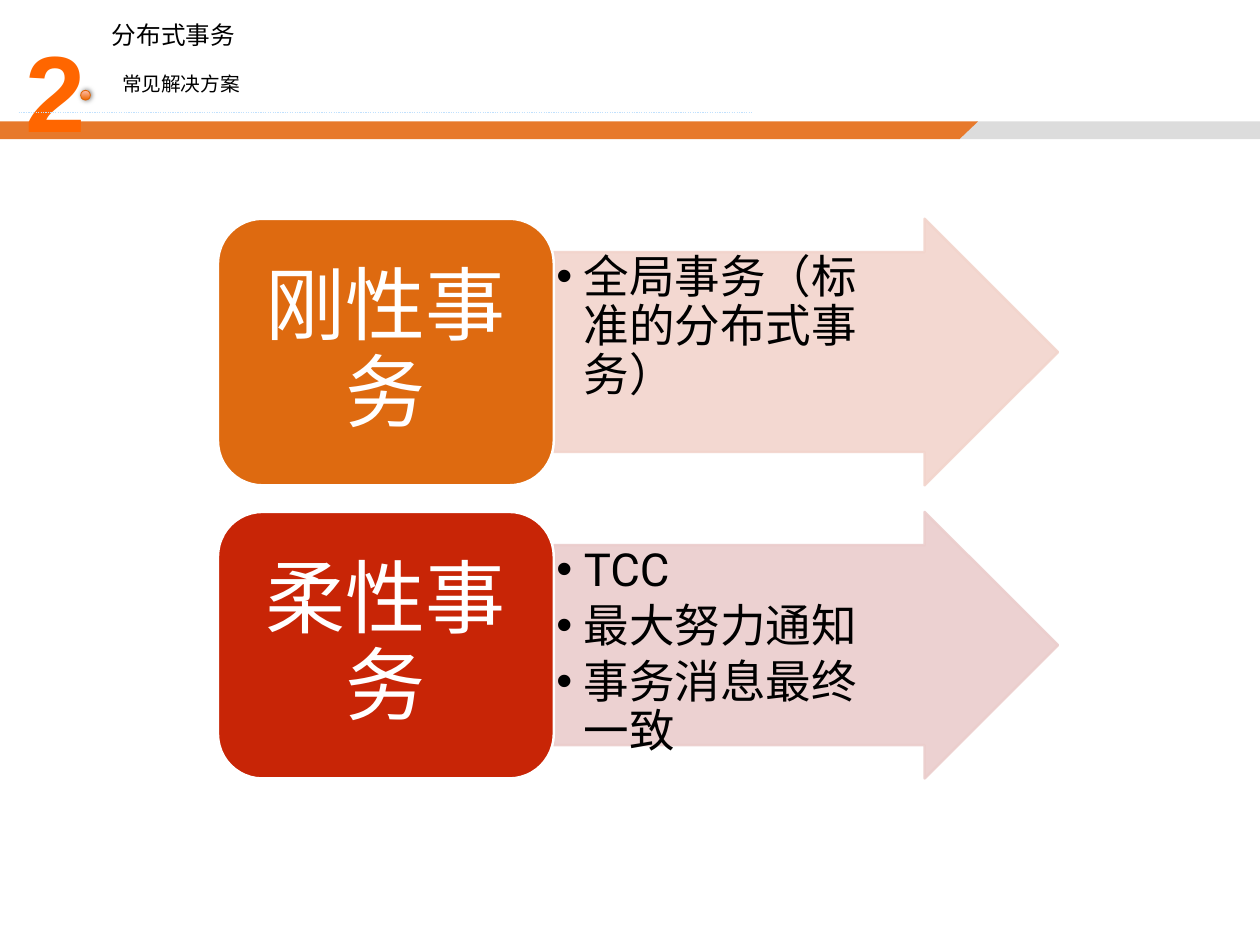
from lxml.etree import SubElement
from pptx import Presentation
from pptx.dml.color import RGBColor
from pptx.enum.dml import MSO_LINE
from pptx.enum.shapes import MSO_CONNECTOR, MSO_SHAPE
from pptx.enum.text import MSO_ANCHOR, PP_ALIGN
from pptx.oxml.ns import qn
from pptx.util import Inches, Pt

COLORS = {
    "grey": "DCDCDC", "orange": "E7792B", "number": "FF6600",
    "dot_dark": "EE6800", "dot_light": "FFBEAD", "dot_line": "DE670B",
    "rule": "C1E1FE", "black": "000000", "white": "FFFFFF",
    "rigid": "DE6A10", "rigid_arrow": "F2D4CC",
    "flexible": "C82506", "flexible_arrow": "EBCDCC",
}


def rgb(name):
    return RGBColor.from_string(COLORS[name])


def add_run(p, text, size, font, color, bold=False):
    """Add a run whose font also applies to Chinese characters."""
    r = p.add_run()
    r.text = text
    r.font.size = Pt(size)
    r.font.bold = bold
    r.font.color.rgb = rgb(color)
    r.font.name = font
    SubElement(r.font._element, qn("a:ea"), typeface=font)


prs = Presentation()
prs.slide_width, prs.slide_height = Inches(14.22), Inches(10.67)
s = prs.slides.add_slide(prs.slide_layouts[6])

# Header band
bands = [
    ("grey", [(11.02, 1.37), (14.22, 1.37), (14.22, 1.57), (10.82, 1.57)]),
    ("orange", [(0, 1.37), (11.04, 1.37), (10.83, 1.57), (0, 1.57)]),
]
for color, points in bands:
    corners = [(Inches(x), Inches(y)) for x, y in points]
    builder = s.shapes.build_freeform(*corners[0])
    builder.add_line_segments(corners[1:], close=True)
    sp = builder.convert_to_shape()
    sp.shadow.inherit = False
    sp.fill.solid()
    sp.fill.fore_color.rgb = rgb(color)
    sp.line.fill.background()

# Section number and titles
headings = [
    ("2", (0.23, -0.27, 0.8, 1.77), 88, "Arial", "number", True, PP_ALIGN.CENTER),
    ("分布式事务", (1.16, 0.18, 1.6, 0.77), 20, "Noto Sans CJK SC", "black", False, PP_ALIGN.CENTER),
    ("常见解决方案", (1.28, 0.76, 5.69, 0.37), 16, "Noto Sans CJK JP", "black", False, PP_ALIGN.LEFT),
]
for text, place, size, font, color, bold, align in headings:
    tf = s.shapes.add_textbox(*map(Inches, place)).text_frame
    tf.word_wrap = True
    p = tf.paragraphs[0]
    p.alignment = align
    if bold:
        p.line_spacing = 1.25
        tf.margin_left = tf.margin_right = 0
        tf.margin_top = Inches(0.18)
    add_run(p, text, size, font, color, bold)

# Dot beside the number
dot = s.shapes.add_shape(MSO_SHAPE.OVAL, Inches(0.91), Inches(1.02), Inches(0.11), Inches(0.11))
dot.fill.gradient()
dot.fill.gradient_angle = 90
for stop, color in zip(dot.fill.gradient_stops, ("dot_dark", "dot_light")):
    stop.color.rgb = rgb(color)
dot.line.color.rgb = rgb("dot_line")
dot.line.width = Pt(0.75)
dot.shadow.inherit = False
effects = dot._element.spPr.find(qn("a:effectLst"))
shadow = SubElement(effects, qn("a:outerShdw"), blurRad=str(Pt(4)), dist=str(Pt(1)), dir="0")
shadow_color = SubElement(shadow, qn("a:srgbClr"), val=COLORS["black"])
SubElement(shadow_color, qn("a:alpha"), val="50000")

rule = s.shapes.add_connector(MSO_CONNECTOR.STRAIGHT, Inches(0.21), Inches(1.27), Inches(8.48), Inches(1.27))
rule.line.color.rgb = rgb("rule")
rule.line.width = Pt(1)
rule.line.dash_style = MSO_LINE.ROUND_DOT
SubElement(rule._element.spPr, qn("a:effectLst"))

# Each kind of transaction: an arrow with its solutions, then its name
kinds = [
    ("刚性事务", "rigid", ["全局事务（标准的分布式事务）"]),
    ("柔性事务", "flexible", ["TCC", "最大努力通知", "事务消息最终一致"]),
]
TOP, PITCH, HEIGHT = 2.47, 3.31, 3.01
for i, (name, color, solutions) in enumerate(kinds):
    top = Inches(TOP + i * PITCH)

    arrow = s.shapes.add_shape(MSO_SHAPE.RIGHT_ARROW, Inches(6.25), top, Inches(5.69), Inches(HEIGHT))
    arrow.adjustments[0], arrow.adjustments[1] = 0.75, 0.5
    box = s.shapes.add_shape(MSO_SHAPE.ROUNDED_RECTANGLE, Inches(2.46), top, Inches(3.79), Inches(HEIGHT))
    box.adjustments[0] = 0.1667
    for sp, fill, line in ((arrow, color + "_arrow", color + "_arrow"), (box, color, "white")):
        sp.shadow.inherit = False
        sp.fill.solid()
        sp.fill.fore_color.rgb = rgb(fill)
        sp.line.color.rgb = rgb(line)
        sp.line.width = Pt(2)
    for clr in arrow._element.spPr.iter(qn("a:srgbClr")):
        SubElement(clr, qn("a:alpha"), val="90000")

    tf = arrow.text_frame
    tf.word_wrap = True
    tf.vertical_anchor = MSO_ANCHOR.TOP
    tf.margin_left, tf.margin_right = Inches(0.03), Inches(0.77)
    tf.margin_top = tf.margin_bottom = Inches(0.02)
    for j, solution in enumerate(solutions):
        p = tf.add_paragraph() if j else tf.paragraphs[0]
        p.alignment = PP_ALIGN.LEFT
        p.line_spacing = 0.9
        p.space_after = Pt(5.6)
        pPr = p._p.get_or_add_pPr()
        pPr.set("marL", str(Inches(0.31)))
        pPr.set("indent", str(-Inches(0.31)))
        SubElement(pPr, qn("a:buFont"), typeface="Arial")
        SubElement(pPr, qn("a:buChar"), char="•")
        add_run(p, solution, 37, "Roboto", "black")

    tf = box.text_frame
    tf.word_wrap = True
    tf.vertical_anchor = MSO_ANCHOR.MIDDLE
    tf.margin_left = tf.margin_right = Inches(0.27)
    tf.margin_top = tf.margin_bottom = Inches(0.13)
    p = tf.paragraphs[0]
    p.alignment = PP_ALIGN.CENTER
    p.line_spacing = 0.9
    add_run(p, name, 65, "Roboto", "white")

prs.save("out.pptx")
